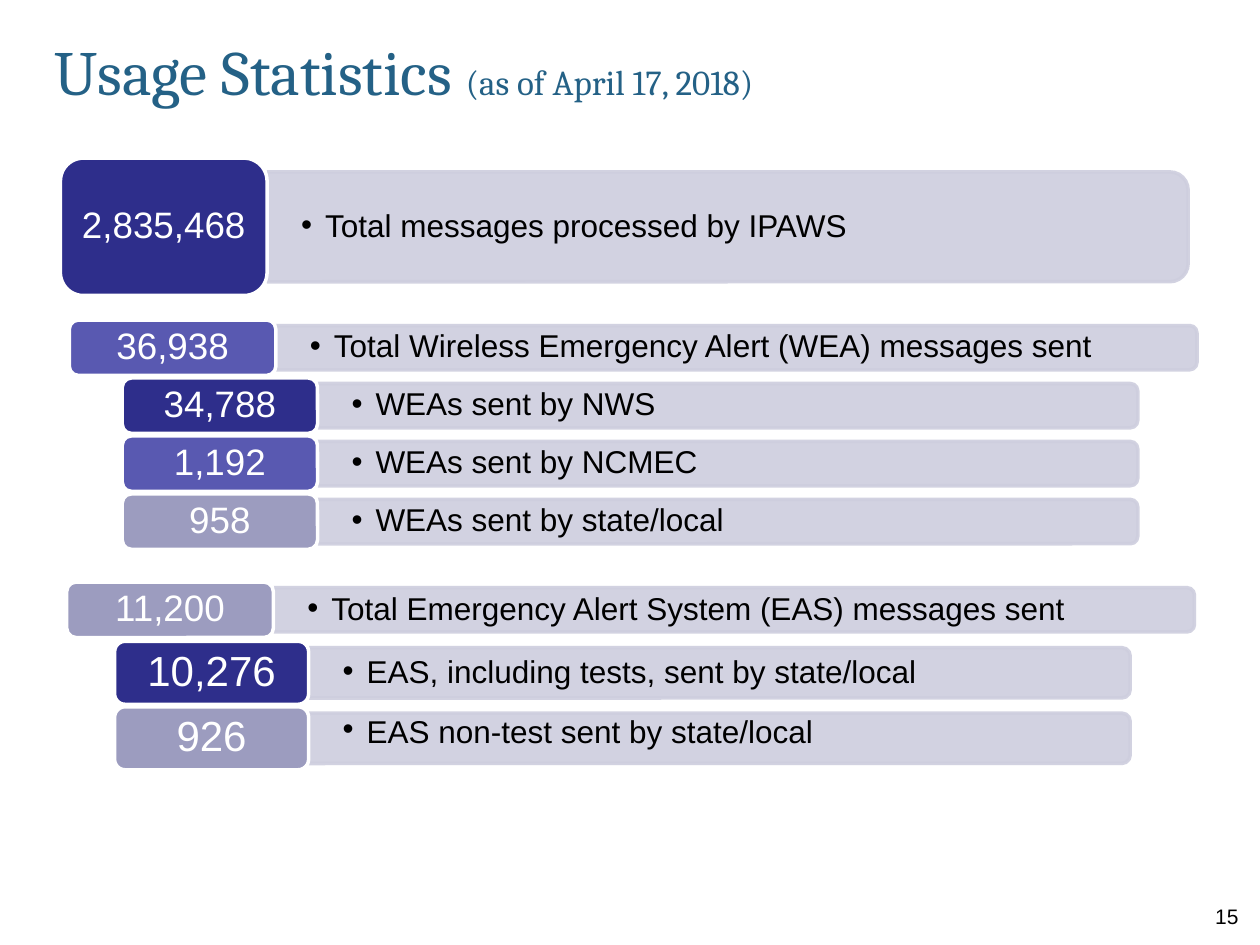
from pptx import Presentation
from pptx.dml.color import RGBColor
from pptx.enum.shapes import MSO_SHAPE as Shape
from pptx.enum.text import MSO_ANCHOR as Anchor, PP_ALIGN as Align
from pptx.oxml.ns import qn
from pptx.util import Inches, Pt
from lxml.etree import SubElement

NAVY = RGBColor(0x2E, 0x2E, 0x8B)
VIOLET = RGBColor(0x59, 0x59, 0xB1)
LAVENDER = RGBColor(0x9C, 0x9C, 0xBF)
BAR = RGBColor(0xCE, 0xCE, 0xDE)
TITLE_BLUE = RGBColor(0x24, 0x61, 0x86)
WHITE = RGBColor(0xFF, 0xFF, 0xFF)
BLACK = RGBColor(0, 0, 0)
BAR_TO_TILE_HEIGHT = 0.8


def add_run(paragraph, text, size, color, font="Arial"):
    """Append one formatted run to a paragraph."""
    run = paragraph.add_run()
    run.text = text
    run.font.name = font
    run.font.size = Pt(size)
    run.font.color.rgb = color


def set_frame(frame, horizontal, vertical, anchor=Anchor.MIDDLE):
    """Set wrapping, insets and anchor of a text frame."""
    frame.word_wrap = True
    frame.margin_left = frame.margin_right = Inches(horizontal)
    frame.margin_top = frame.margin_bottom = Inches(vertical)
    frame.vertical_anchor = anchor


def style_shape(shape, fill, line):
    """Give a shape a plain fill, a thin outline and no shadow."""
    shape.shadow.inherit = False
    shape.fill.solid()
    shape.fill.fore_color.rgb = fill
    shape.line.color.rgb = line
    shape.line.width = Pt(2)


def add_bar(slide, left, middle, width, height):
    """Add a translucent bar whose right-hand corners are rounded."""
    center = left + width / 2
    shape = slide.shapes.add_shape(
        Shape.ROUND_2_SAME_RECTANGLE,
        Inches(center - height / 2), Inches(middle - width / 2),
        Inches(height), Inches(width))
    shape.rotation = 90
    style_shape(shape, BAR, BAR)
    for color in shape.fill._xPr.find(qn("a:solidFill")), shape.line._ln.find(qn("a:solidFill")):
        SubElement(color[0], qn("a:alpha")).set("val", "90000")


def add_bullet_text(slide, text, left, middle, width, height, spacing):
    """Add a bulleted description centred on the bar."""
    box = slide.shapes.add_textbox(
        Inches(left), Inches(middle - height / 2), Inches(width), Inches(height))
    set_frame(box.text_frame, 0.27, 0.14)
    paragraph = box.text_frame.paragraphs[0]
    paragraph.line_spacing = spacing
    properties = paragraph._p.get_or_add_pPr()
    properties.set("marL", str(Inches(0.19)))
    properties.set("indent", str(Inches(-0.19)))
    SubElement(properties, qn("a:buFont")).set("typeface", "Arial")
    SubElement(properties, qn("a:buChar")).set("char", "•")
    add_run(paragraph, text, 18, BLACK)


def add_tile(slide, text, left, middle, width, height, fill, size):
    """Add a rounded tile holding a figure."""
    shape = slide.shapes.add_shape(
        Shape.ROUNDED_RECTANGLE, Inches(left), Inches(middle - height / 2),
        Inches(width), Inches(height))
    style_shape(shape, fill, WHITE)
    set_frame(shape.text_frame, 0.09, 0.04)
    paragraph = shape.text_frame.paragraphs[0]
    paragraph.alignment = Align.CENTER
    paragraph.line_spacing = 0.9
    add_run(paragraph, text, size, WHITE)


def add_statistic(slide, figure, label, middle, fill, tile, bar_width, size=21, spacing=0.9):
    """Add a bar, its description and the figure tile at its left end."""
    left, width, height = tile
    bar_left = left + width
    bar_height = height * BAR_TO_TILE_HEIGHT
    add_bar(slide, bar_left, middle, bar_width, bar_height)
    add_bullet_text(slide, label, bar_left, middle, bar_width, bar_height, spacing)
    add_tile(slide, figure, left, middle, width, height, fill, size)


def add_title(slide):
    """Fill the title placeholder."""
    title = slide.shapes.title
    title.left, title.top = Inches(0.33), Inches(0.17)
    title.width, title.height = Inches(9.25), Inches(0.83)
    set_frame(title.text_frame, 0.1, 0.05)
    paragraph = title.text_frame.paragraphs[0]
    paragraph.alignment = Align.LEFT
    paragraph.line_spacing = 0.95
    add_run(paragraph, "Usage Statistics ", 36, TITLE_BLUE, "Cambria")
    add_run(paragraph, "(as of April 17, 2018)", 20, TITLE_BLUE, "Cambria")


def add_page_number(slide, number):
    """Add the page number at the lower right."""
    box = slide.shapes.add_textbox(Inches(8.33), Inches(7.17), Inches(1.5), Inches(0.33))
    set_frame(box.text_frame, 0, 0, Anchor.TOP)
    paragraph = box.text_frame.paragraphs[0]
    paragraph.alignment = Align.RIGHT
    add_run(paragraph, number, 12, BLACK)


def main():
    """Build and save the usage statistics slide."""
    presentation = Presentation()
    presentation.slide_width, presentation.slide_height = Inches(10), Inches(7.5)
    slide = presentation.slides.add_slide(presentation.slide_layouts[5])
    add_title(slide)

    add_statistic(slide, "2,835,468", "Total messages processed by IPAWS",
                  1.8, NAVY, (0.48, 1.64, 1.09), 7.31)
    add_statistic(slide, "36,938", "Total Wireless Emergency Alert (WEA) messages sent",
                  2.76, VIOLET, (0.55, 1.64, 0.44), 7.31)
    wea_senders = [("34,788", "NWS", NAVY), ("1,192", "NCMEC", VIOLET),
                   ("958", "state/local", LAVENDER)]
    for index, (figure, sender, fill) in enumerate(wea_senders):
        add_statistic(slide, figure, f"WEAs sent by {sender}", 3.22 + 0.46 * index,
                      fill, (0.97, 1.55, 0.44), 6.51)
    add_statistic(slide, "11,200", "Total Emergency Alert System (EAS) messages sent",
                  4.84, LAVENDER, (0.53, 1.64, 0.44), 7.31)
    eas_kinds = [("10,276", "EAS, including tests, sent by state/local", NAVY, 0.9),
                 ("926", "EAS non-test sent by state/local", LAVENDER, 0.5)]
    for index, (figure, label, fill, spacing) in enumerate(eas_kinds):
        add_statistic(slide, figure, label, 5.34 + 0.52 * index, fill,
                      (0.91, 1.54, 0.5), 6.52, size=24, spacing=spacing)

    add_page_number(slide, "15")
    presentation.save("out.pptx")


if __name__ == "__main__":
    main()
